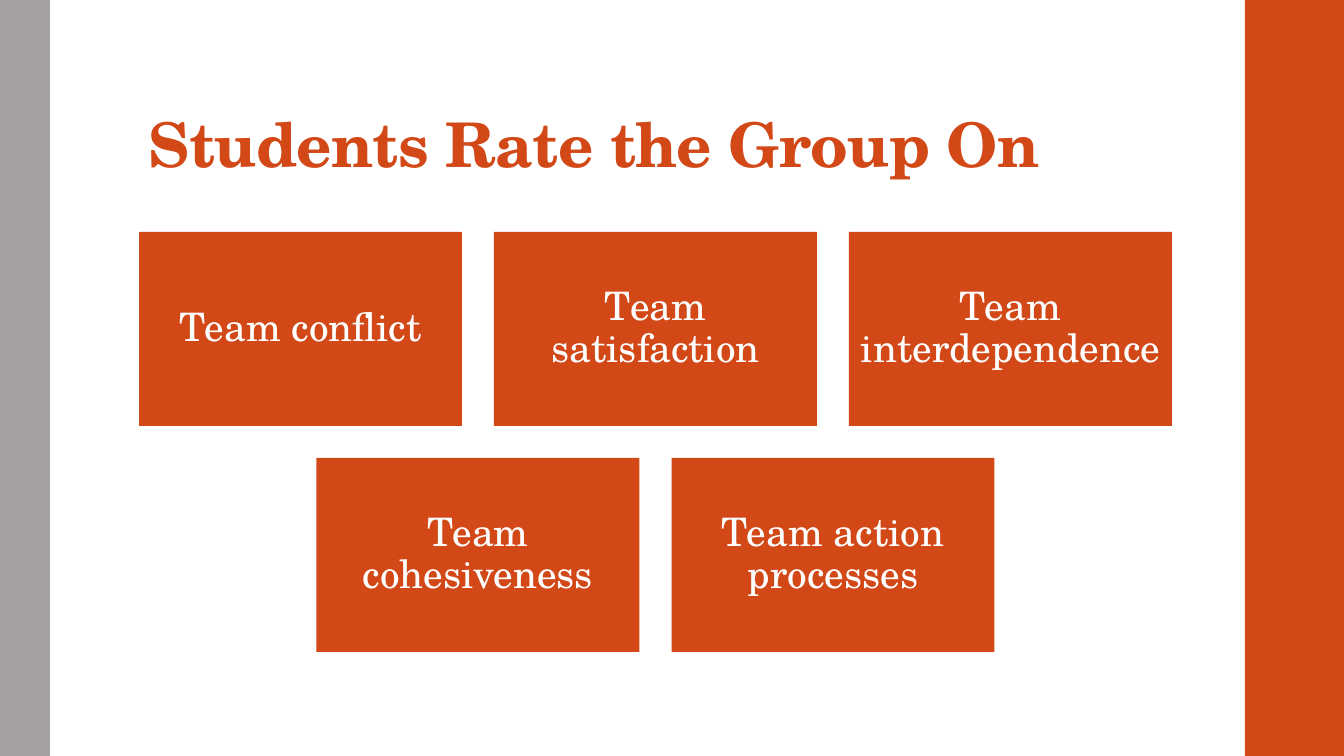
from pptx import Presentation
from pptx.dml.color import RGBColor
from pptx.enum.shapes import MSO_SHAPE
from pptx.enum.text import MSO_ANCHOR, PP_ALIGN
from pptx.util import Pt

TITLE = "Students Rate the Group On"
ROWS = [
    ["Team conflict", "Team satisfaction", "Team interdependence"],
    ["Team cohesiveness", "Team action processes"],
]
FONT = "TeX Gyre Schola"
ORANGE = RGBColor(0xD3, 0x48, 0x17)
GRAY = RGBColor(0xA6, 0xA1, 0xA1)
WHITE = RGBColor(0xFF, 0xFF, 0xFF)

WIDE, HIGH = 1344, 756
LEFT, TOP = 139, 232
CARD_W, CARD_H, GAP = 323, 194, 32
SCALE = 914400 / 100.8


def px(*nums):
    return [round(n * SCALE) for n in nums]


def add_rect(slide, box, color):
    rect = slide.shapes.add_shape(MSO_SHAPE.RECTANGLE, *px(*box))
    rect.shadow.inherit = False
    rect.fill.solid()
    rect.fill.fore_color.rgb = color
    rect.line.fill.background()
    return rect


def write(shape, text, size, color, align, anchor, pads, bold=False):
    frame = shape.text_frame
    frame.word_wrap = True
    frame.vertical_anchor = anchor
    (frame.margin_left, frame.margin_top,
     frame.margin_right, frame.margin_bottom) = px(*pads)
    para = frame.paragraphs[0]
    para.alignment = align
    para.line_spacing = 0.9
    run = para.add_run()
    run.text = text
    font = run.font
    font.name, font.size, font.bold = FONT, Pt(size), bold
    font.color.rgb = color
    return run


def main():
    deck = Presentation()
    deck.slide_width, deck.slide_height = px(WIDE, HIGH)
    slide = deck.slides.add_slide(deck.slide_layouts[6])

    add_rect(slide, (1245, 0, WIDE - 1245, HIGH), ORANGE)
    add_rect(slide, (0, 0, 50, HIGH), GRAY)

    title = slide.shapes.add_textbox(*px(139, 32, 1068, 154))
    run = write(title, TITLE, 44, ORANGE, PP_ALIGN.LEFT,
                MSO_ANCHOR.BOTTOM, (10, 3, 10, 5), True)
    run.font._element.set("spc", "-50")

    most = max(map(len, ROWS))
    for i, row in enumerate(ROWS):
        start = LEFT + (most - len(row)) * (CARD_W + GAP) / 2
        y = TOP + i * (CARD_H + GAP)
        for j, text in enumerate(row):
            x = start + j * (CARD_W + GAP)
            card = add_rect(slide, (x, y, CARD_W, CARD_H), ORANGE)
            write(card, text, 28, WHITE, PP_ALIGN.CENTER,
                  MSO_ANCHOR.MIDDLE, (10, 12, 10, 12))

    deck.save("out.pptx")


if __name__ == "__main__":
    main()
